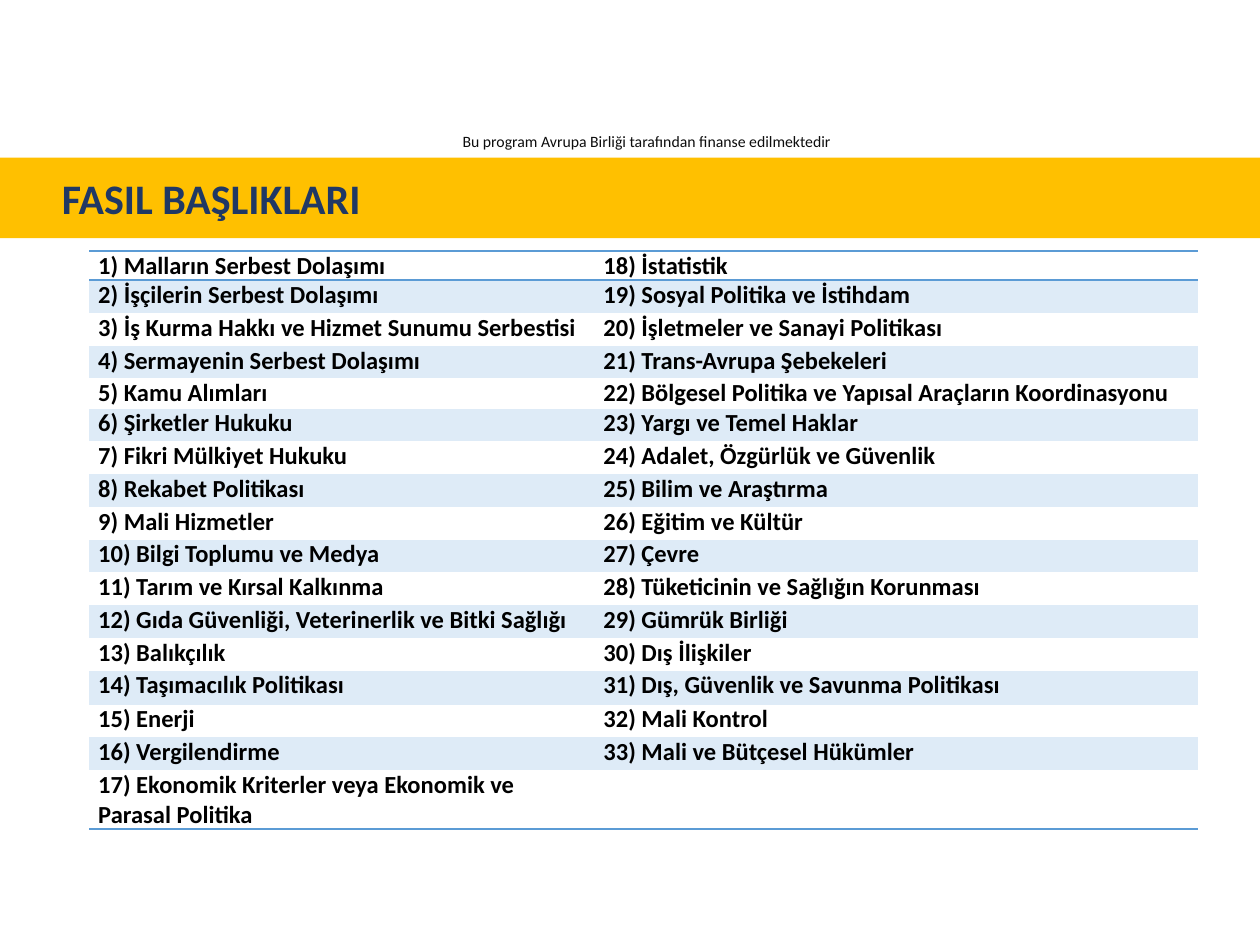
from lxml import etree
from pptx import Presentation
from pptx.dml.color import RGBColor
from pptx.enum import text as t
from pptx.oxml import ns
from pptx.util import Inches, Pt

GOLD = RGBColor(0xFF, 0xC0, 0x00)
NAVY = RGBColor(0x20, 0x38, 0x64)
INK = RGBColor(0x0D, 0x0D, 0x0D)
BLACK = RGBColor(0x00, 0x00, 0x00)
RULE = RGBColor(0x5B, 0x9B, 0xD5)
BAND = RGBColor(0xDE, 0xEB, 0xF7)
NO_GRID_STYLE = "{2D5ABB26-0587-4C30-8999-92F81FD0307C}"

CHAPTERS = [
    "Malların Serbest Dolaşımı",
    "İşçilerin Serbest Dolaşımı",
    "İş Kurma Hakkı ve Hizmet Sunumu Serbestisi",
    "Sermayenin Serbest Dolaşımı",
    "Kamu Alımları",
    "Şirketler Hukuku",
    "Fikri Mülkiyet Hukuku",
    "Rekabet Politikası",
    "Mali Hizmetler",
    "Bilgi Toplumu ve Medya",
    "Tarım ve Kırsal Kalkınma",
    "Gıda Güvenliği, Veterinerlik ve Bitki Sağlığı",
    "Balıkçılık",
    "Taşımacılık Politikası",
    "Enerji",
    "Vergilendirme",
    "Ekonomik Kriterler veya Ekonomik ve Parasal Politika",
    "İstatistik",
    "Sosyal Politika ve İstihdam",
    "İşletmeler ve Sanayi Politikası",
    "Trans-Avrupa Şebekeleri",
    "Bölgesel Politika ve Yapısal Araçların Koordinasyonu",
    "Yargı ve Temel Haklar",
    "Adalet, Özgürlük ve Güvenlik",
    "Bilim ve Araştırma",
    "Eğitim ve Kültür",
    "Çevre",
    "Tüketicinin ve Sağlığın Korunması",
    "Gümrük Birliği",
    "Dış İlişkiler",
    "Dış, Güvenlik ve Savunma Politikası",
    "Mali Kontrol",
    "Mali ve Bütçesel Hükümler",
]
ROW_COUNT = 17
ROW_HEIGHT = 0.26
SPECIAL_HEIGHTS = {0: 0.22, 4: 0.24, 13: 0.27}
COLUMN_WIDTHS = (3.97, 4.83)
COLUMN_INSETS = (0.07, 0.11)


def write(frame, wording, size, color, bold=False, align=t.PP_ALIGN.LEFT):
    paragraph = frame.paragraphs[0]
    paragraph.alignment = align
    run = paragraph.add_run()
    run.text = wording
    run.font.name = "Calibri"
    run.font.size = Pt(size)
    run.font.bold = bold
    run.font.color.rgb = color


def add_funding_note(slide, left, top, width, height):
    note = slide.shapes.add_textbox(Inches(left), Inches(top), Inches(width), Inches(height))
    note.text_frame.word_wrap = True
    write(note.text_frame, "Bu program Avrupa Birliği tarafından finanse edilmektedir",
          size=9, color=INK, align=t.PP_ALIGN.CENTER)


def place_heading(slide, left, top, width, height):
    heading = slide.shapes.title
    heading.left, heading.top = Inches(left), Inches(top)
    heading.width, heading.height = Inches(width), Inches(height)
    heading.fill.solid()
    heading.fill.fore_color.rgb = GOLD
    frame = heading.text_frame
    frame.auto_size = t.MSO_AUTO_SIZE.NONE
    frame.vertical_anchor = t.MSO_ANCHOR.MIDDLE
    frame.margin_left = Inches(0.49)
    write(frame, "FASIL BAŞLIKLARI", size=24, color=NAVY, bold=True)


def draw_rule(cell, side):
    line = etree.SubElement(cell._tc.get_or_add_tcPr(), ns.qn(f"a:{side}"), w=str(Pt(1)))
    fill = etree.SubElement(line, ns.qn("a:solidFill"))
    etree.SubElement(fill, ns.qn("a:srgbClr"), val=str(RULE))


def format_cell(cell, row, inset):
    cell.margin_top = cell.margin_bottom = cell.margin_right = 0
    cell.margin_left = Inches(inset)
    if row == 0:
        draw_rule(cell, "lnT")
    if row in (0, ROW_COUNT - 1):
        draw_rule(cell, "lnB")
    if row % 2:
        cell.fill.solid()
        cell.fill.fore_color.rgb = BAND
    else:
        cell.fill.background()


def add_chapter_table(slide, left, top):
    heights = [SPECIAL_HEIGHTS.get(row, ROW_HEIGHT) for row in range(ROW_COUNT)]
    table = slide.shapes.add_table(ROW_COUNT, len(COLUMN_WIDTHS), Inches(left), Inches(top),
                                   Inches(sum(COLUMN_WIDTHS)), Inches(sum(heights))).table
    table._tbl.tblPr.find(ns.qn("a:tableStyleId")).text = NO_GRID_STYLE
    for row, height in enumerate(heights):
        table.rows[row].height = Inches(height)
    for column, (width, inset) in enumerate(zip(COLUMN_WIDTHS, COLUMN_INSETS)):
        table.columns[column].width = Inches(width)
        for row in range(ROW_COUNT):
            cell = table.cell(row, column)
            format_cell(cell, row, inset)
            index = column * ROW_COUNT + row
            if index < len(CHAPTERS):
                write(cell.text_frame, f"{index + 1}) {CHAPTERS[index]}",
                      size=14, color=BLACK, bold=True)


def main():
    deck = Presentation()
    deck.slide_width, deck.slide_height = Inches(10), Inches(7.5)
    slide = deck.slides.add_slide(deck.slide_layouts.get_by_name("Title Only"))
    add_funding_note(slide, 2.79, 1, 4.68, 0.25)
    place_heading(slide, 0, 1.25, 10, 0.64)
    add_chapter_table(slide, 0.71, 1.99)
    deck.save("out.pptx")


if __name__ == "__main__":
    main()
